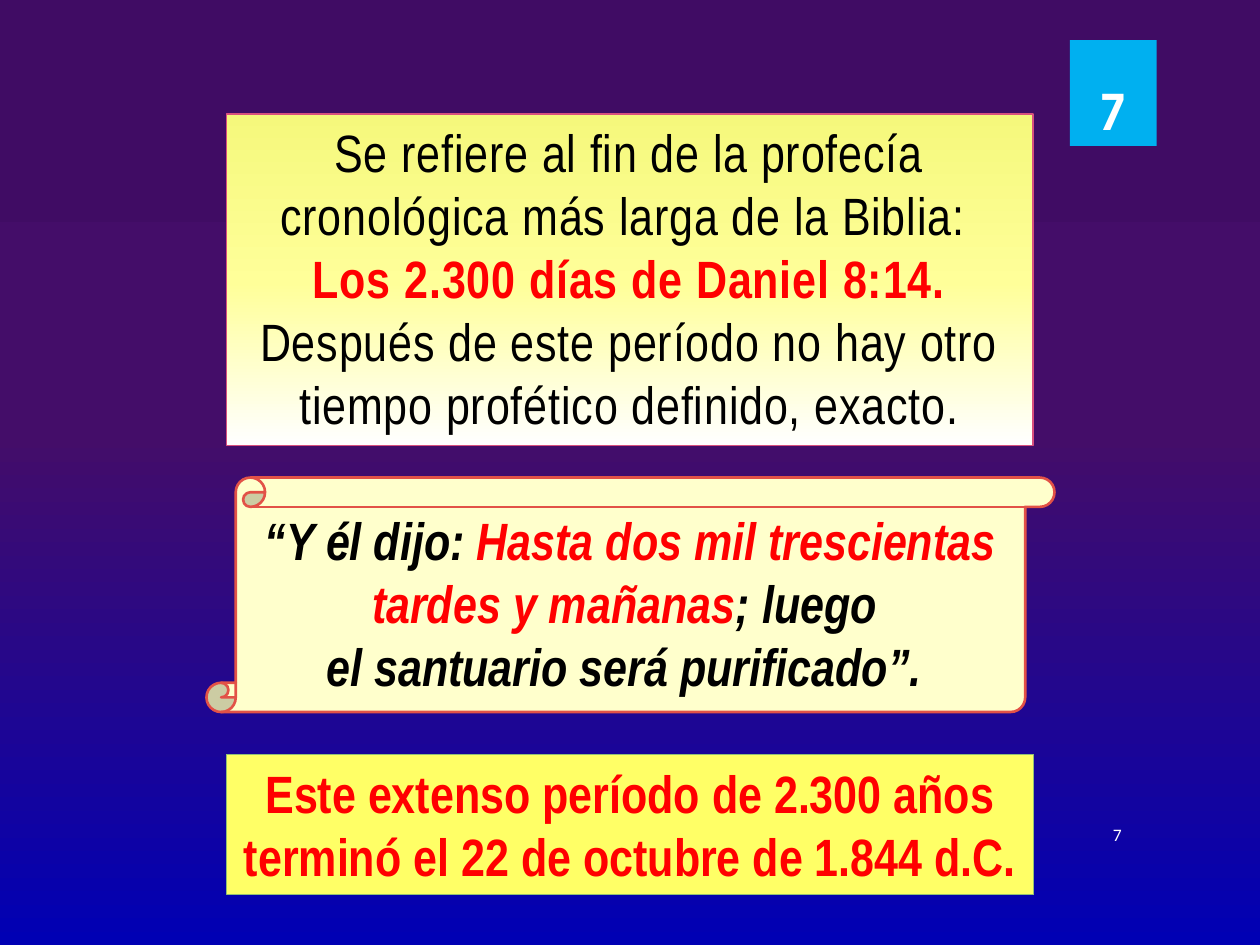
"""Build the slide on the 2,300 days of Daniel 8:14."""
from copy import deepcopy

from pptx import Presentation
from pptx.dml.color import RGBColor
from pptx.enum.shapes import MSO_SHAPE
from pptx.enum.text import MSO_ANCHOR, MSO_AUTO_SIZE, PP_ALIGN
from pptx.util import Pt

RECTANGLE, SCROLL = MSO_SHAPE.RECTANGLE, MSO_SHAPE.VERTICAL_SCROLL
TOP, MIDDLE, BOTTOM = MSO_ANCHOR.TOP, MSO_ANCHOR.MIDDLE, MSO_ANCHOR.BOTTOM
CENTER, RIGHT = PP_ALIGN.CENTER, PP_ALIGN.RIGHT
GROW = MSO_AUTO_SIZE.SHAPE_TO_FIT_TEXT

COLORS = {
    "black": "000000", "red": "FF0000", "white": "FFFFFF", "cyan": "00B0F0",
    "yellow": "FFFF66", "cream": "FFFFCC",
    "pink line": "D8507E", "green line": "91BF77", "scroll line": "E25247",
    "purple": "400C64", "plum": "440D69", "blue": "0000B4",
    "lemon": "F5F87C", "pale yellow": "FFFF99",
}


def color(name):
    return RGBColor.from_string(COLORS[name])


def shade_down(fill, stops):
    fill.gradient()
    fill.gradient_angle = 270
    first = fill.gradient_stops[0]._gs
    first.addnext(deepcopy(first))
    for stop, (position, name) in zip(fill.gradient_stops, stops):
        stop.position = position
        stop.color.rgb = color(name)


deck = Presentation()
deck.slide_width, deck.slide_height = Pt(720), Pt(540)
page = deck.slides.add_slide(deck.slide_layouts[6])
shade_down(page.background.fill, [(0.01, "purple"), (0.46, "plum"), (1, "blue")])

prophecy = [
    [("Se refiere al fin de la profecía cronológica más larga de la Biblia: ", "black", False)],
    [("Los 2.300 días de Daniel 8:14. ", "red", True),
     ("Después de este período no hay otro tiempo profético definido, exacto.", "black", False)],
]
ending = [[("Este extenso período de 2.300 años terminó el 22 de octubre de 1.844 d.C.", "red", True)]]
verse = [
    [("“Y él dijo: ", "black", True),
     ("Hasta dos mil trescientas tardes y mañanas", "red", True),
     ("; luego ", "black", True)],
    [("el santuario será purificado”. ", "black", True)],
]
panels = [
    (RECTANGLE, (129.6, 65.2, 460.8, 189.2), None, "pink line", 0.75, TOP, prophecy),
    (RECTANGLE, (129.6, 431.2, 461.2, 80), "yellow", "green line", 0.75, TOP, ending),
    (SCROLL, (118, 272.9, 484.6, 134), "cream", "scroll line", 1.5, MIDDLE, verse),
]
for kind, place, fill, edge, width, anchor, paragraphs in panels:
    panel = page.shapes.add_shape(kind, *map(Pt, place))
    panel.shadow.inherit = False
    if fill:
        panel.fill.solid()
        panel.fill.fore_color.rgb = color(fill)
    else:
        shade_down(panel.fill, [(0, "lemon"), (0.51, "pale yellow"), (1, "white")])
    panel.line.color.rgb = color(edge)
    panel.line.width = Pt(width)
    frame = panel.text_frame
    frame.word_wrap = True
    frame.vertical_anchor = anchor
    if kind == RECTANGLE:
        frame.auto_size = GROW
    for index, spans in enumerate(paragraphs):
        para = frame.add_paragraph() if index else frame.paragraphs[0]
        para.alignment = CENTER
        para.font.name, para.font.size = "Arial Narrow", Pt(30)
        para.font.italic = kind == SCROLL
        for text, ink, bold in spans:
            span = para.add_run()
            span.text = text
            span.font.bold = bold
            span.font.color.rgb = color(ink)
            if paragraphs is prophecy:
                span._r.get_or_add_rPr().set("spc", "50")

number = page.shapes.add_textbox(Pt(614.9), Pt(462.2), Pt(33.1), Pt(29.5))
badge = page.shapes.add_shape(RECTANGLE, Pt(611.3), Pt(23), Pt(49.7), Pt(60.5))
badge.shadow.inherit = False
badge.fill.solid()
badge.fill.fore_color.rgb = color("cyan")
badge.line.fill.background()
for box, anchor, alignment, font, size, bold in [
    (number, MIDDLE, RIGHT, "Calibri", 10, False),
    (badge, BOTTOM, CENTER, "TeX Gyre Adventor", 28, True),
]:
    box.text_frame.word_wrap = True
    box.text_frame.vertical_anchor = anchor
    para = box.text_frame.paragraphs[0]
    para.text = "7"
    para.alignment = alignment
    para.font.name, para.font.size, para.font.bold = font, Pt(size), bold
    para.font.color.rgb = color("white")

deck.save("out.pptx")
